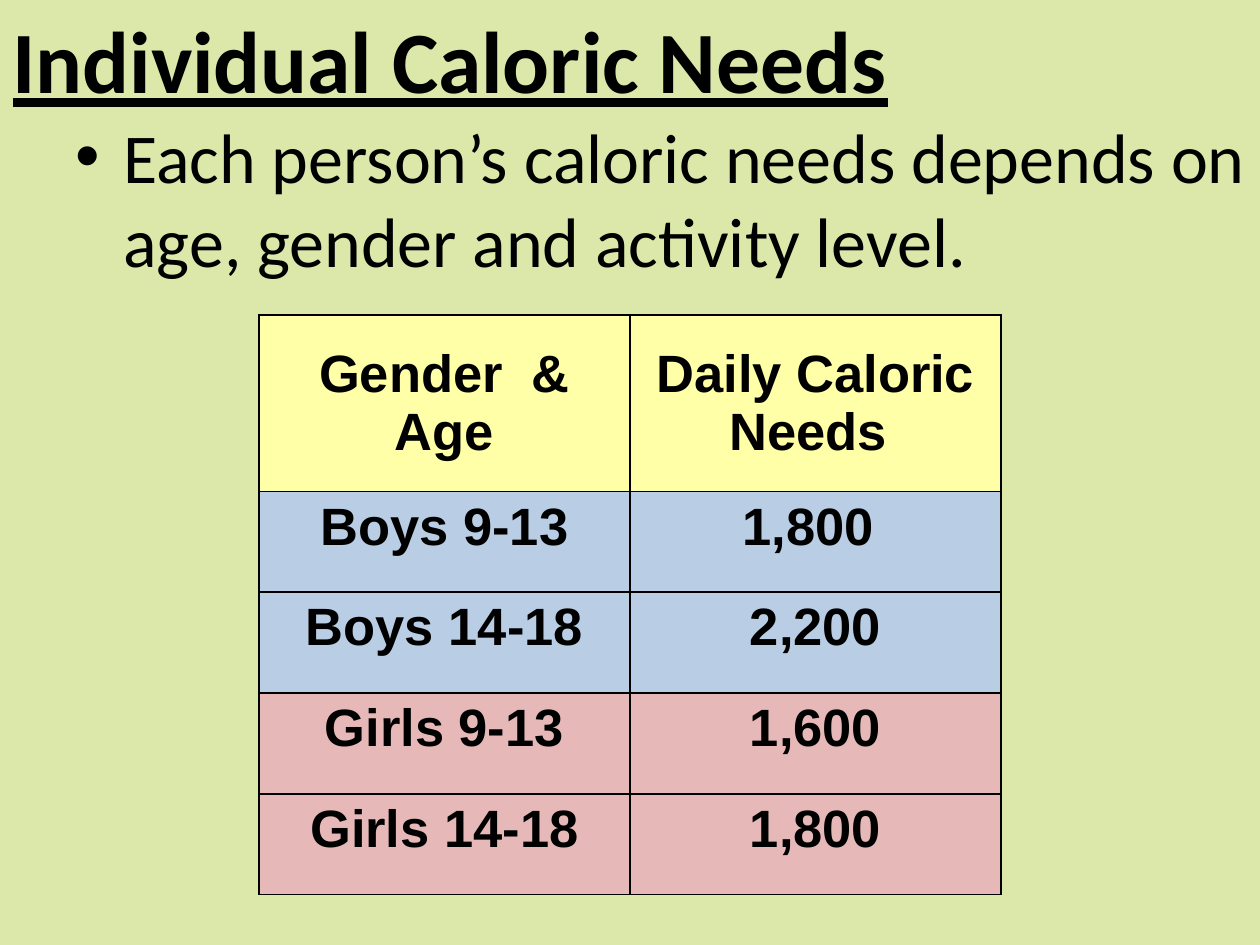
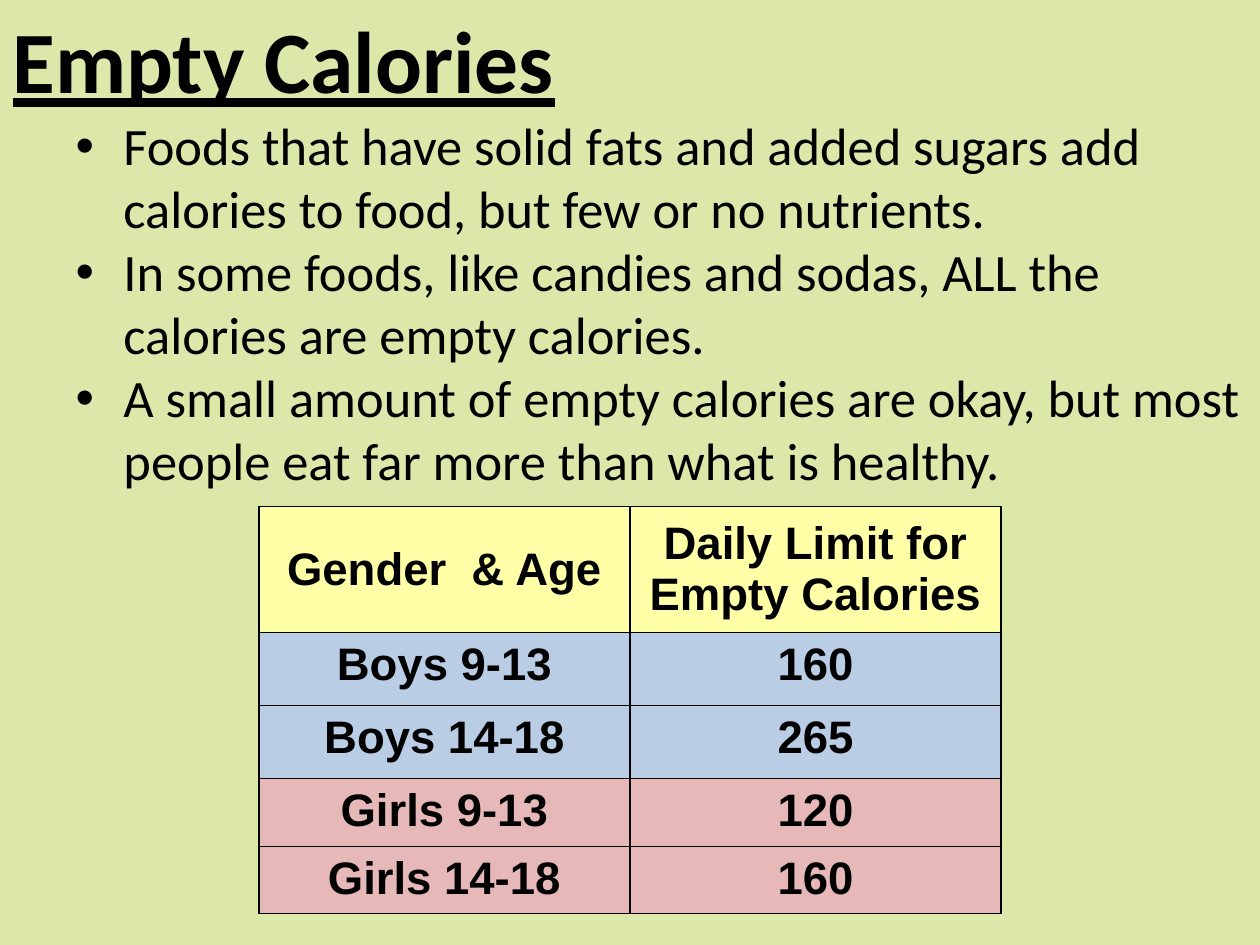
from dataclasses import dataclass

from lxml import etree
from pptx import Presentation
from pptx import util as u
from pptx.dml.color import RGBColor
from pptx.enum import text
from pptx.oxml import ns

COLUMNS, ROWS = 20, 15


@dataclass(frozen=True)
class Theme:
    background: str = "DBE8AA"
    ink: str = "000000"
    header: str = "FFFFA7"
    boys: str = "B9CDE5"
    girls: str = "E6B9B8"
    text_font: str = "Calibri"
    table_font: str = "Arial"
    title_size: int = 50
    border: int = 1


class CaloriePages:
    """Holds the deck, its theme and the current page; lengths are grid columns and rows."""

    def __init__(self, theme):
        self.theme = theme
        self.deck = Presentation()
        self.deck.slide_width = u.Inches(10)
        self.deck.slide_height = u.Inches(7.5)
        fill = self.deck.slide_master.background.fill
        fill.solid()
        fill.fore_color.rgb = RGBColor.from_string(theme.background)

    def x(self, columns):
        return round(self.deck.slide_width * columns / COLUMNS)

    def y(self, rows):
        return round(self.deck.slide_height * rows / ROWS)

    def add_page(self):
        self.page = self.deck.slides.add_slide(self.deck.slide_layouts[1])

    def style(self, paragraph, font, size, bold=False, underline=False):
        for span in paragraph.runs:
            span.font.name = font
            span.font.size = u.Pt(size)
            span.font.bold = bold
            span.font.underline = underline
            span.font.color.rgb = RGBColor.from_string(self.theme.ink)

    def place(self, box, top, height):
        """Spans the full page width with a placeholder and aligns its text to the top."""
        box.left, box.top = 0, self.y(top)
        box.width, box.height = self.x(COLUMNS), self.y(height)
        frame = box.text_frame
        frame.word_wrap = True
        frame.auto_size = text.MSO_AUTO_SIZE.NONE
        frame.vertical_anchor = text.MSO_ANCHOR.TOP
        return frame

    def title(self, words):
        frame = self.place(self.page.shapes.title, 0, 1.8)
        frame.text = words
        para = frame.paragraphs[0]
        para.alignment = text.PP_ALIGN.LEFT
        self.style(para, self.theme.text_font, self.theme.title_size, True, True)

    def bullets(self, lines, size, height):
        frame = self.place(self.page.placeholders[1], 1.8, height)
        frame.margin_top = 0
        frame.text = "\n".join(lines)
        for para in frame.paragraphs:
            para.level = 1
            para.space_before = u.Pt(0)
            props = para._p.get_or_add_pPr()
            props.set("marL", str(u.Inches(0.88)))
            props.set("indent", str(u.Inches(-0.38)))
            etree.SubElement(props, ns.qn("a:buFont")).set("typeface", "Arial")
            etree.SubElement(props, ns.qn("a:buChar")).set("char", "•")
            self.style(para, self.theme.text_font, size)

    def border(self, cell):
        props = cell._tc.get_or_add_tcPr()
        for side in ("lnL", "lnR", "lnT", "lnB"):
            line = etree.SubElement(props, ns.qn(f"a:{side}"), w=str(u.Pt(self.theme.border)))
            fill = etree.SubElement(line, ns.qn("a:solidFill"))
            etree.SubElement(fill, ns.qn("a:srgbClr"), val=self.theme.ink)

    def table(self, records, size, top, heights, width=11.78):
        """Draws a centred two-column table: a header, two rows for boys, two for girls."""
        theme = self.theme
        colours = [theme.header] + [theme.boys] * 2 + [theme.girls] * 2
        frame = self.page.shapes.add_table(
            len(records), 2, self.x((COLUMNS - width) / 2), self.y(top),
            self.x(width), self.y(sum(heights)))
        grid = frame.table
        grid.first_row = grid.horz_banding = False
        for column in grid.columns:
            column.width = self.x(width / 2)
        for row, height, colour, record in zip(grid.rows, heights, colours, records):
            row.height = self.y(height)
            for cell, words in zip(row.cells, record):
                cell.text = words
                self.border(cell)
                cell.fill.solid()
                cell.fill.fore_color.rgb = RGBColor.from_string(colour)
                if colour == theme.header:
                    cell.vertical_anchor = text.MSO_ANCHOR.MIDDLE
                para = cell.text_frame.paragraphs[0]
                para.alignment = text.PP_ALIGN.CENTER
                self.style(para, theme.table_font, size, bold=True)


def main():
    pages = CaloriePages(Theme())
    groups = ["Gender  & Age", "Boys 9-13", "Boys 14-18", "Girls 9-13", "Girls 14-18"]

    pages.add_page()
    pages.title("Individual Caloric Needs")
    pages.bullets(
        ["Each person’s caloric needs depends on age, gender and activity level."],
        size=40, height=2.8)
    needs = ["Daily Caloric Needs ", "1,800 ", "2,200", "1,600", "1,800"]
    pages.table(list(zip(groups, needs)), size=30, top=5, heights=[2.8] + [1.6] * 4)

    pages.add_page()
    pages.title("Empty Calories")
    pages.bullets(
        ["Foods that have solid fats and added sugars add calories to food, "
         "but few or no nutrients.",
         "In some foods, like candies and sodas, ALL the calories are empty calories.",
         "A small amount of empty calories are okay, but most people eat far more "
         "than what is healthy."],
        size=30, height=6.14)
    limits = ["Daily Limit for Empty Calories", "160", "265", "120", "160"]
    pages.table(list(zip(groups, limits)), size=26, top=8.04,
                heights=[2, 1.16, 1.16, 1.08, 1.06])

    pages.deck.save("out.pptx")


if __name__ == "__main__":
    main()
